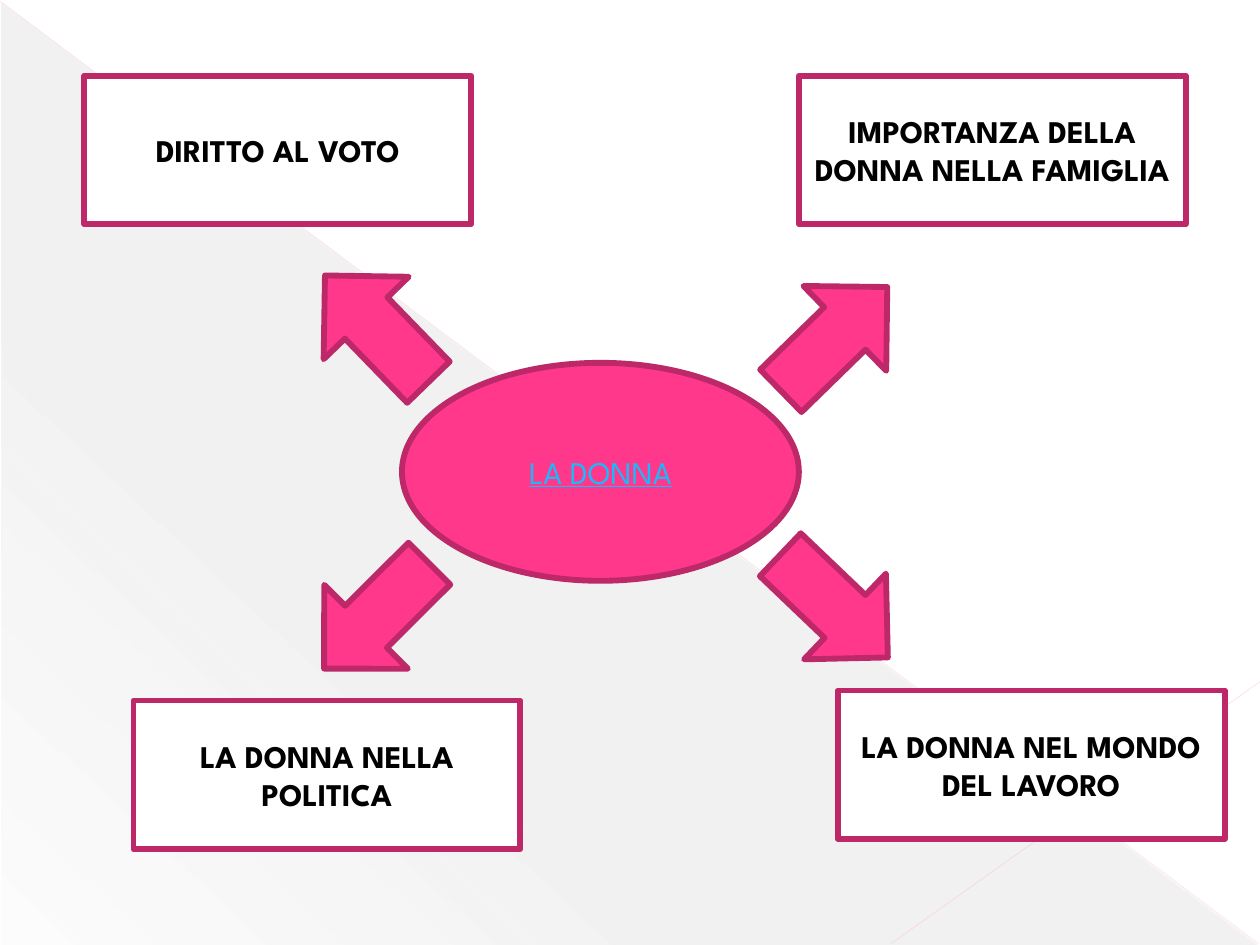
from lxml.etree import SubElement
from pptx import Presentation
from pptx.dml.color import RGBColor
from pptx.enum.shapes import MSO_CONNECTOR, MSO_SHAPE
from pptx.enum.text import MSO_ANCHOR, PP_ALIGN
from pptx.oxml.ns import qn
from pptx.util import Inches, Pt

FONT = "League Spartan"
PINK, BORDER, WHITE, BLACK, CYAN = "FF388C", "BD2968", "FFFFFF", "000000", "17BBFD"
BOX_SIZE = (3.07, 1.18)
ARROW_SIZE = (1.18, 0.94)
TOPICS = [
    ("IMPORTANZA DELLA DONNA NELLA FAMIGLIA", (6.34, 0.6), (6.03, 2.22), 315.7),
    ("DIRITTO AL VOTO", (0.67, 0.6), (2.4, 2.14), 225.9),
    ("LA DONNA NEL MONDO DEL LAVORO", (6.65, 5.48), (6.03, 4.34), 43.7),
    ("LA DONNA NELLA POLITICA", (1.06, 5.56), (2.4, 4.42), 135.1),
]


def rgb(value):
    """Turn a hex string into a colour."""
    return RGBColor.from_string(value)


def add_alpha(color_element, percent):
    """Make a colour element partly transparent."""
    SubElement(color_element, qn("a:alpha"), val=str(percent * 1000))


def add_figure(page, kind, box, fill):
    """Add a bordered shape in the given box."""
    figure = page.shapes.add_shape(kind, *map(Inches, box))
    figure.shadow.inherit = False
    figure.fill.solid()
    figure.fill.fore_color.rgb = rgb(fill)
    figure.line.color.rgb = rgb(BORDER)
    figure.line.width = Pt(3.35)
    return figure


def write_label(figure, text, color, bold=False, underline=False):
    """Write centred text inside a shape."""
    frame = figure.text_frame
    frame.word_wrap = True
    frame.vertical_anchor = MSO_ANCHOR.MIDDLE
    para = frame.paragraphs[0]
    para.text = text
    para.alignment = PP_ALIGN.CENTER
    font = para.font
    font.name, font.size = FONT, Pt(18)
    font.bold, font.underline = bold, underline
    font.color.rgb = rgb(color)


def add_hairline(page, start, end, color, width, opacity):
    """Add a thin translucent line."""
    line = page.shapes.add_connector(MSO_CONNECTOR.STRAIGHT, *map(Inches, start + end))
    line.line.color.rgb = rgb(color)
    line.line.width = Pt(width)
    properties = line._element.spPr
    add_alpha(properties.find(".//" + qn("a:srgbClr")), opacity)
    SubElement(properties, qn("a:effectLst"))


def add_backdrop(page, box):
    """Add the shaded triangle and the two hairlines."""
    triangle = page.shapes.add_shape(MSO_SHAPE.RIGHT_TRIANGLE, *map(Inches, box))
    triangle.shadow.inherit = False
    triangle.line.fill.background()
    triangle.fill.gradient()
    triangle.fill.gradient_angle = 360 - 133
    stops = triangle._element.spPr.find(".//" + qn("a:gsLst"))
    for stop in list(stops):
        stops.remove(stop)
    for position, opacity in ((0, 10), (70, 8), (100, 1)):
        stop = SubElement(stops, qn("a:gs"), pos=str(position * 1000))
        add_alpha(SubElement(stop, qn("a:srgbClr"), val="666666"), opacity)
    add_hairline(page, (0, 0.01), (9.99, 7.49), "FFB7CB", 0.39, 35)
    add_hairline(page, (10, 5.41), (7.07, 7.49), "FFBFD0", 0.47, 45)


def add_center(page, box):
    """Add the central theme."""
    ellipse = add_figure(page, MSO_SHAPE.OVAL, box, PINK)
    write_label(ellipse, "LA DONNA", CYAN, underline=True)


def add_topic(page, text, box, arrow_box, angle):
    """Add a topic box and the arrow that points to it."""
    arrow = add_figure(page, MSO_SHAPE.RIGHT_ARROW, arrow_box, PINK)
    arrow.rotation = angle
    topic = add_figure(page, MSO_SHAPE.RECTANGLE, box, WHITE)
    write_label(topic, text, BLACK, bold=True)


def main():
    """Build the concept map and save it."""
    deck = Presentation()
    deck.slide_width, deck.slide_height = Inches(10), Inches(7.5)
    page = deck.slides.add_slide(deck.slide_layouts[6])
    page.background.fill.solid()
    page.background.fill.fore_color.rgb = rgb(WHITE)
    add_backdrop(page, (0.01, 0.02, 9.98, 7.48))
    add_center(page, (3.19, 2.88, 3.15, 1.73))
    for text, corner, arrow_corner, angle in TOPICS:
        add_topic(page, text, corner + BOX_SIZE, arrow_corner + ARROW_SIZE, angle)
    deck.save("out.pptx")


if __name__ == "__main__":
    main()
